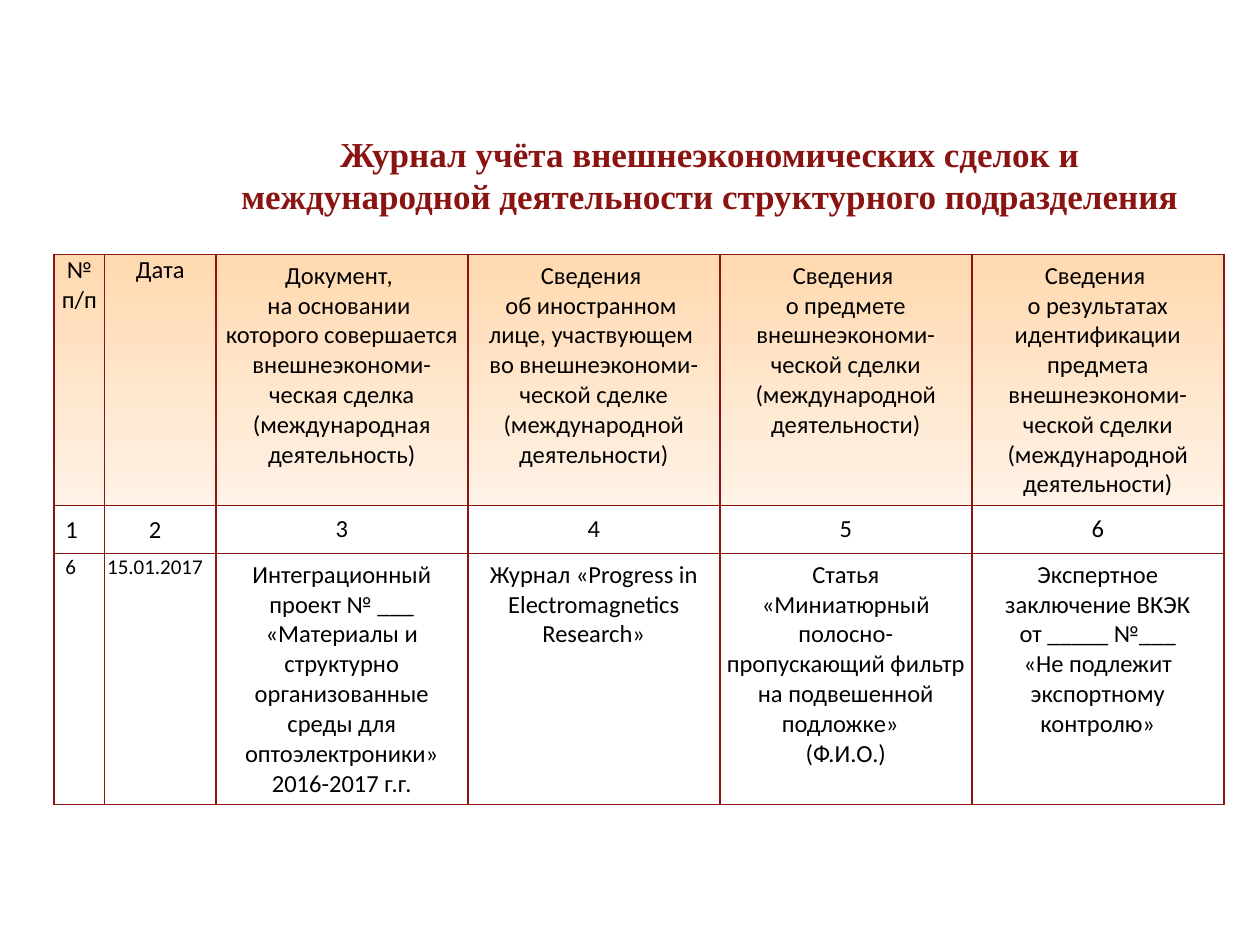
from lxml import etree
from pptx import Presentation
from pptx.dml.color import RGBColor
from pptx.enum import text
from pptx.oxml import ns
from pptx.util import Cm, Pt

COLORS = {"maroon": "8A1411", "black": "000000", "peach": "FFD9AF", "cream": "FFF2E6"}

# Content: each cell is a list of paragraphs
TITLE = ("Журнал учёта внешнеэкономических сделок и "
         "международной деятельности структурного подразделения")
HEADINGS = [
    ["№", "п/п"],
    ["Дата"],
    ["Документ, ", "на основании ",
     "которого совершается внешнеэкономи-ческая сделка (международная деятельность)"],
    ["Сведения ", "об иностранном ", "лице, участвующем ",
     "во внешнеэкономи-ческой сделке (международной деятельности)"],
    ["Сведения ",
     "о предмете внешнеэкономи-ческой сделки (международной деятельности)"],
    ["Сведения ",
     "о результатах идентификации предмета внешнеэкономи-ческой сделки "
     "(международной деятельности)"],
]
NUMBERS = [[str(n)] for n in range(1, len(HEADINGS) + 1)]
ENTRY = [
    ["6"],
    ["15.01.2017"],
    ["Интеграционный проект № ___ «Материалы и структурно организованные среды "
     "для оптоэлектроники»", "2016-2017 г.г."],
    ["Журнал «Progress in Electromagnetics Research»"],
    ["Статья «Миниатюрный полосно-пропускающий фильтр на подвешенной подложке»  ",
     "(Ф.И.О.)"],
    ["Экспертное заключение ВКЭК", "от _____ №___",
     "«Не подлежит экспортному контролю»"],
]
JOURNAL = [HEADINGS, NUMBERS, ENTRY]

# Layout in centimetres
COLUMN_WIDTHS = [1.02, 2.24] + [5.08] * 4
ROW_HEIGHTS = [5.06, 0.97, 5.06]
PAD, THIN_PAD, WIDE_PAD = 0.13, 0.02, 0.23


def color(name):
    return RGBColor.from_string(COLORS[name])


def set_margins(box, left, top, right, bottom):
    box.margin_left, box.margin_top = Cm(left), Cm(top)
    box.margin_right, box.margin_bottom = Cm(right), Cm(bottom)


def style_font(font, name, size, color_name, bold=False):
    font.name, font.size, font.bold = name, Pt(size), bold
    font.color.rgb = color(color_name)


def add_borders(cell):
    properties = cell._tc.get_or_add_tcPr()
    for place, side in enumerate("LRTB"):
        line = etree.Element(ns.qn(f"a:ln{side}"), w=str(Pt(1)))
        solid = etree.SubElement(line, ns.qn("a:solidFill"))
        etree.SubElement(solid, ns.qn("a:srgbClr"), val=COLORS["maroon"])
        properties.insert(place, line)


def cell_margins(row, column):
    if column > 1:
        return PAD, PAD, PAD, PAD
    left = WIDE_PAD if row and column == 0 else THIN_PAD
    right = WIDE_PAD if row and column == 1 else THIN_PAD
    return left, THIN_PAD, right, 0


def fill_cell(cell, row, column, paragraphs):
    cell.text_frame.text = "\n".join(paragraphs)
    set_margins(cell, *cell_margins(row, column))
    cell.vertical_anchor = text.MSO_ANCHOR.MIDDLE if row == 1 else text.MSO_ANCHOR.TOP
    left_aligned = row and column == 0
    size = 12 if row == 2 and column < 2 else 14
    for paragraph in cell.text_frame.paragraphs:
        paragraph.alignment = text.PP_ALIGN.LEFT if left_aligned else text.PP_ALIGN.CENTER
        for run in paragraph.runs:
            style_font(run.font, "Calibri", size, "black")
    if row == 0:
        cell.fill.gradient()
        cell.fill.gradient_angle = 270
        for stop, name in zip(cell.fill.gradient_stops, ("peach", "cream")):
            stop.color.rgb = color(name)
    else:
        cell.fill.background()
    add_borders(cell)


presentation = Presentation()
presentation.slide_width, presentation.slide_height = Cm(25.4), Cm(19.05)
slide = presentation.slides.add_slide(presentation.slide_layouts[6])

# Title
title = slide.shapes.add_textbox(Cm(4.29), Cm(1.93), Cm(20.04), Cm(3.18)).text_frame
title.word_wrap = True
title.vertical_anchor = text.MSO_ANCHOR.MIDDLE
set_margins(title, PAD, PAD, PAD, PAD)
title.text = TITLE
title.paragraphs[0].alignment = text.PP_ALIGN.CENTER
style_font(title.paragraphs[0].runs[0].font, "Times New Roman", 20, "maroon", bold=True)

# Journal table
journal = slide.shapes.add_table(
    len(JOURNAL), len(HEADINGS), Cm(1.09), Cm(5.13),
    Cm(sum(COLUMN_WIDTHS)), Cm(sum(ROW_HEIGHTS))).table
journal.first_row = journal.horz_banding = False
for column, width in zip(journal.columns, COLUMN_WIDTHS):
    column.width = Cm(width)
for row, height in zip(journal.rows, ROW_HEIGHTS):
    row.height = Cm(height)
for r, entries in enumerate(JOURNAL):
    for c, paragraphs in enumerate(entries):
        fill_cell(journal.cell(r, c), r, c, paragraphs)

presentation.save("out.pptx")
